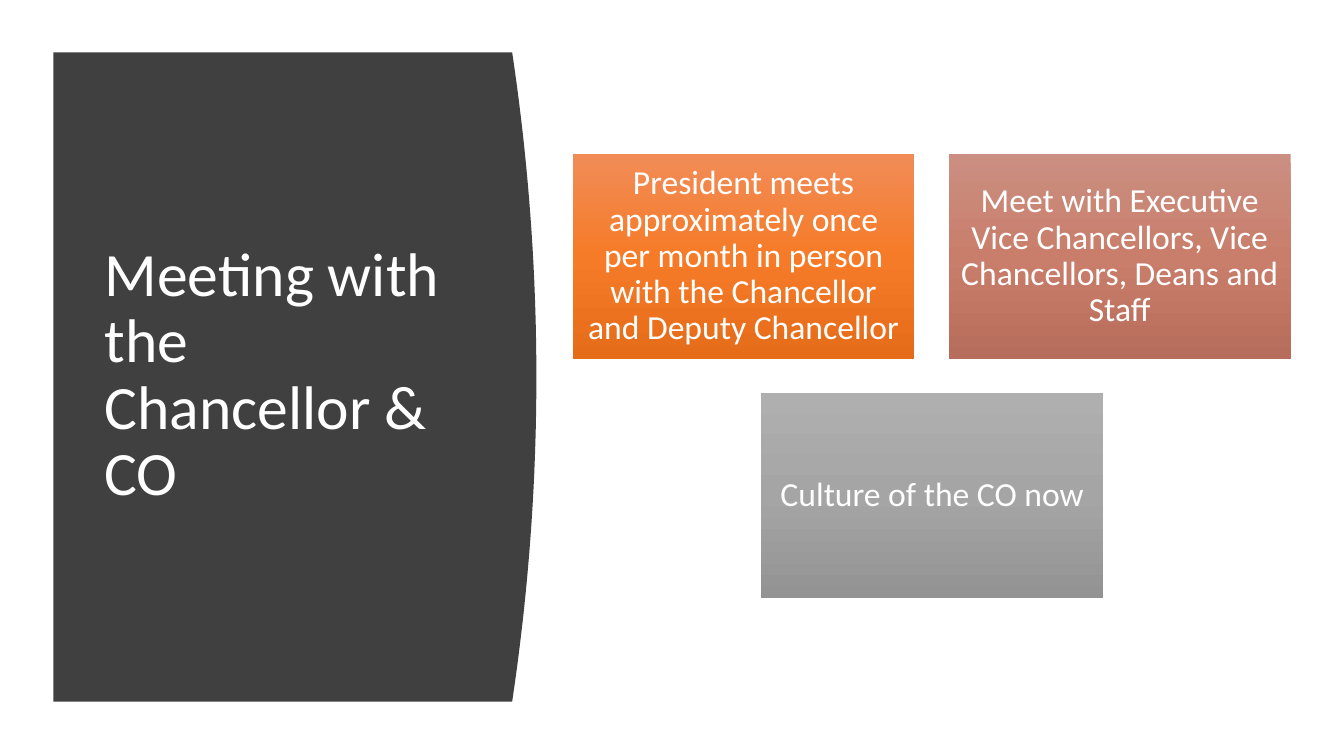
from copy import deepcopy

from pptx import Presentation
from pptx.dml.color import RGBColor
from pptx.enum.shapes import MSO_SHAPE
from pptx.enum.text import MSO_ANCHOR, PP_ALIGN
from pptx.oxml.ns import qn
from pptx.util import Inches, Pt

CARD_WIDTH, CARD_HEIGHT = 3.39, 2.03
PANEL_LEFT, PANEL_TOP, PANEL_BOTTOM = 0.53, 0.52, 6.96
PANEL_EDGE, PANEL_BULGE = 5.08, 0.24
CURVE_STEPS = 40

CARDS = [
    (5.68, 1.53, ("F18C57", "F67B28", "E56C19"),
     "President meets approximately once per month in person "
     "with the Chancellor and Deputy Chancellor"),
    (9.41, 1.53, ("CB8F81", "C97E6B", "B76D5B"),
     "Meet with Executive Vice Chancellors, Vice Chancellors, Deans and Staff"),
    (7.55, 3.9, ("AFAFAF", "A5A5A5", "939393"), "Culture of the CO now"),
]


def color(value):
    return RGBColor.from_string(value)


def write_text(shape, text, size, alignment):
    frame = shape.text_frame
    frame.word_wrap = True
    frame.vertical_anchor = MSO_ANCHOR.MIDDLE
    paragraph = frame.paragraphs[0]
    paragraph.text = text
    paragraph.alignment = alignment
    paragraph.line_spacing = 0.9
    paragraph.font.name = "Calibri"
    paragraph.font.size = Pt(size)
    paragraph.font.color.rgb = color("FFFFFF")
    return frame


def fill_gradient(shape, colors):
    shape.fill.gradient()
    shape.fill.gradient_angle = 270
    stop_list = shape.element.find(".//" + qn("a:gsLst"))
    stop_list.append(deepcopy(stop_list[-1]))
    for index, stop in enumerate(shape.fill.gradient_stops):
        stop.position = index / 2
        stop.color.rgb = color(colors[index])


def add_panel(page):
    half = (PANEL_BOTTOM - PANEL_TOP) / 2
    middle = PANEL_TOP + half
    offsets = [2 * step / CURVE_STEPS - 1 for step in range(CURVE_STEPS + 1)]
    points = [
        (Inches(PANEL_EDGE + PANEL_BULGE * (1 - offset ** 2)),
         Inches(middle + half * offset))
        for offset in offsets
    ]
    points.append((Inches(PANEL_LEFT), Inches(PANEL_BOTTOM)))
    builder = page.shapes.build_freeform(Inches(PANEL_LEFT), Inches(PANEL_TOP))
    builder.add_line_segments(points, close=True)
    panel = builder.convert_to_shape()
    panel.shadow.inherit = False
    panel.fill.solid()
    panel.fill.fore_color.rgb = color("404040")
    panel.line.fill.background()


def add_title(page, text):
    box = page.shapes.add_textbox(
        Inches(0.94), Inches(1.11), Inches(3.74), Inches(5.24))
    write_text(box, text, 44, PP_ALIGN.LEFT)


def add_card(page, left, top, colors, text):
    card = page.shapes.add_shape(
        MSO_SHAPE.RECTANGLE, Inches(left), Inches(top),
        Inches(CARD_WIDTH), Inches(CARD_HEIGHT))
    card.shadow.inherit = False
    card.line.fill.background()
    fill_gradient(card, colors)
    frame = write_text(card, text, 24, PP_ALIGN.CENTER)
    frame.margin_left = frame.margin_right = Inches(0.1)
    frame.margin_top = frame.margin_bottom = Inches(0.1)


def main():
    deck = Presentation()
    deck.slide_width = Inches(13.33)
    deck.slide_height = Inches(7.5)
    page = deck.slides.add_slide(deck.slide_layouts[6])
    add_panel(page)
    add_title(page, "Meeting with the Chancellor & CO")
    for card in CARDS:
        add_card(page, *card)
    deck.save("out.pptx")


if __name__ == "__main__":
    main()
